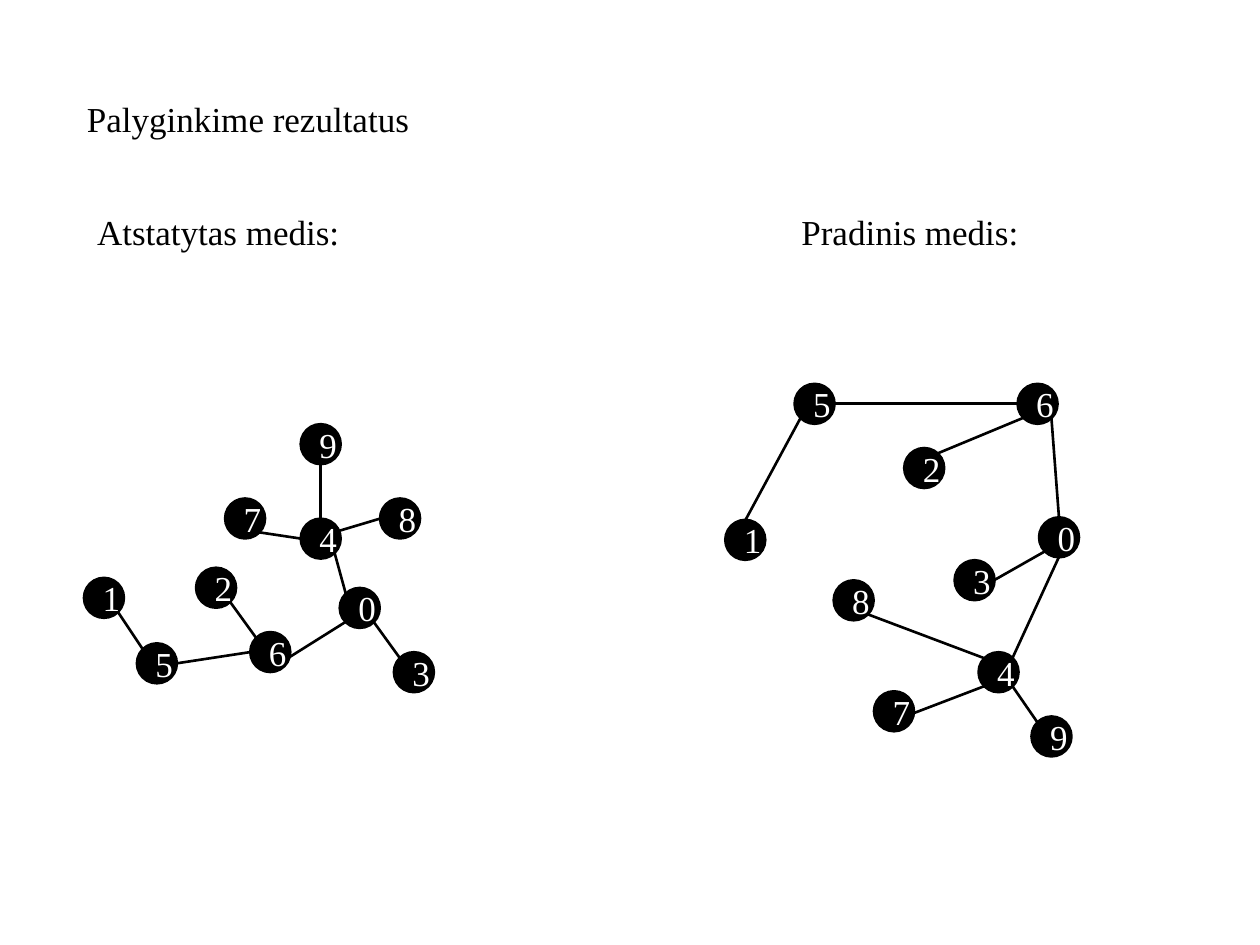
"""Build a slide that compares a restored tree with the initial tree."""
from math import cos, radians, sin

from lxml.etree import SubElement
from pptx import Presentation
from pptx.dml.color import RGBColor
from pptx.enum.shapes import MSO_CONNECTOR, MSO_SHAPE
from pptx.enum.text import MSO_ANCHOR, MSO_AUTO_SIZE, PP_ALIGN
from pptx.oxml.ns import qn
from pptx.util import Inches, Pt

COLUMNS, ROWS = 100, 75
NODE_SIZE = 3.1
RIGHT, LOWER_RIGHT, BOTTOM, LOWER_LEFT = 0, 45, 90, 135
LEFT, UPPER_LEFT, TOP, UPPER_RIGHT = 180, 225, 270, 315

RESTORED_NODES = {
    "1": (6.7, 45.9), "5": (10.9, 51.1), "2": (15.6, 45.1),
    "6": (19.9, 50.2), "0": (27, 46.7), "3": (31.3, 51.8),
    "8": (30.2, 39.6), "4": (23.9, 41.2), "7": (17.9, 39.6),
    "9": (23.9, 33.7),
}
RESTORED_EDGES = [
    ("1", LOWER_RIGHT, "5", UPPER_LEFT),
    ("2", LOWER_RIGHT, "6", UPPER_LEFT),
    ("0", LOWER_RIGHT, "3", UPPER_LEFT),
    ("5", RIGHT, "6", LEFT),
    ("0", LOWER_LEFT, "6", 16),
    ("4", LOWER_RIGHT, "0", UPPER_LEFT),
    ("7", LOWER_RIGHT, "4", LEFT),
    ("4", 337, "8", LEFT),
    ("9", BOTTOM, "4", TOP),
]
INITIAL_NODES = {
    "5": (63.1, 30.5), "6": (80.8, 30.5), "1": (57.6, 41.3),
    "0": (82.5, 41.1), "8": (66.2, 46.1), "4": (77.7, 51.8),
    "3": (75.8, 44.5), "2": (71.8, 35.6), "9": (81.9, 56.9),
    "7": (69.4, 54.9),
}
INITIAL_EDGES = [
    ("5", RIGHT, "6", LEFT),
    ("4", UPPER_RIGHT, "0", BOTTOM),
    ("1", TOP, "5", LOWER_LEFT),
    ("6", LOWER_RIGHT, "0", TOP),
    ("8", LOWER_RIGHT, "4", UPPER_LEFT),
    ("3", RIGHT, "0", LOWER_LEFT),
    ("2", 312, "6", LOWER_LEFT),
    ("4", LOWER_RIGHT, "9", UPPER_LEFT),
    ("7", 6, "4", LOWER_LEFT),
]


def color(code):
    """Turn a hex string into a colour."""
    return RGBColor.from_string(code)


class TreeSlide:
    """Hold the style and the current slide, and draw its elements."""

    font_name = "Times New Roman"
    font_size = Pt(20)
    ink = "000000"
    paper = "FFFFFF"

    def __init__(self, deck, layout):
        """Add a page and measure its grid."""
        self.page = deck.slides.add_slide(layout)
        self.column = deck.slide_width / COLUMNS
        self.row = deck.slide_height / ROWS

    def place(self, left, top):
        """Convert grid columns and rows to slide lengths."""
        return round(left * self.column), round(top * self.row)

    def label(self, box, text, code, alignment, anchor):
        """Put one styled paragraph into a shape."""
        frame = box.text_frame
        frame.text = text
        frame.word_wrap = True
        frame.vertical_anchor = anchor
        paragraph = frame.paragraphs[0]
        paragraph.alignment = alignment
        paragraph.space_before = Pt(0)
        font = paragraph.font
        font.name, font.size, font.bold = self.font_name, self.font_size, False
        font.color.rgb = color(code)

    def heading(self, index, text, left, top, width, height=4.4):
        """Move, fill and format a text placeholder."""
        box = self.page.placeholders[index]
        box.left, box.top = self.place(left, top)
        box.width, box.height = self.place(width, height)
        self.label(box, text, self.ink, PP_ALIGN.LEFT, MSO_ANCHOR.TOP)
        box.text_frame.auto_size = MSO_AUTO_SIZE.SHAPE_TO_FIT_TEXT

    def node(self, group, number, left, top):
        """Draw a numbered circle."""
        circle = group.shapes.add_shape(
            MSO_SHAPE.OVAL, *self.place(left, top), *self.place(NODE_SIZE, NODE_SIZE))
        circle.shadow.inherit = False
        circle.fill.solid()
        circle.fill.fore_color.rgb = color(self.ink)
        circle.line.color.rgb = color(self.ink)
        circle.line.width = Pt(2)
        self.label(circle, number, self.paper, PP_ALIGN.CENTER, MSO_ANCHOR.MIDDLE)

    def rim(self, corner, angle):
        """Find the point on a circle at a clockwise angle from its right."""
        radius = NODE_SIZE / 2
        left, top = corner
        return self.place(left + radius * (1 + cos(radians(angle))),
                          top + radius * (1 + sin(radians(angle))))

    def edge(self, group, start, end):
        """Draw a line between two points."""
        line = group.shapes.add_connector(MSO_CONNECTOR.STRAIGHT, *start, *end)
        line.line.color.rgb = color(self.ink)
        line.line.width = Pt(1.5)
        SubElement(line._element.spPr, qn("a:effectLst"))

    def tree(self, nodes, edges):
        """Draw the nodes and edges of a tree as one group."""
        group = self.page.shapes.add_group_shape()
        for number, corner in nodes.items():
            self.node(group, number, *corner)
        for first, first_angle, second, second_angle in edges:
            self.edge(group, self.rim(nodes[first], first_angle),
                      self.rim(nodes[second], second_angle))

    def remove_empty_placeholders(self):
        """Remove every placeholder that holds no text."""
        for box in list(self.page.placeholders):
            if not box.text_frame.text:
                box._element.getparent().remove(box._element)


def main():
    """Build and save the deck."""
    deck = Presentation()
    deck.slide_width, deck.slide_height = Inches(10), Inches(7.5)
    slide = TreeSlide(deck, deck.slide_layouts.get_by_name("Comparison"))
    slide.heading(0, "Palyginkime rezultatus", 5.9, 7.2, 81.1)
    slide.heading(1, "Atstatytas medis:", 6.7, 16.2, 22)
    slide.heading(3, "Pradinis medis:", 62.6, 16.2, 22)
    slide.tree(RESTORED_NODES, RESTORED_EDGES)
    slide.tree(INITIAL_NODES, INITIAL_EDGES)
    slide.remove_empty_placeholders()
    deck.save("out.pptx")


if __name__ == "__main__":
    main()
